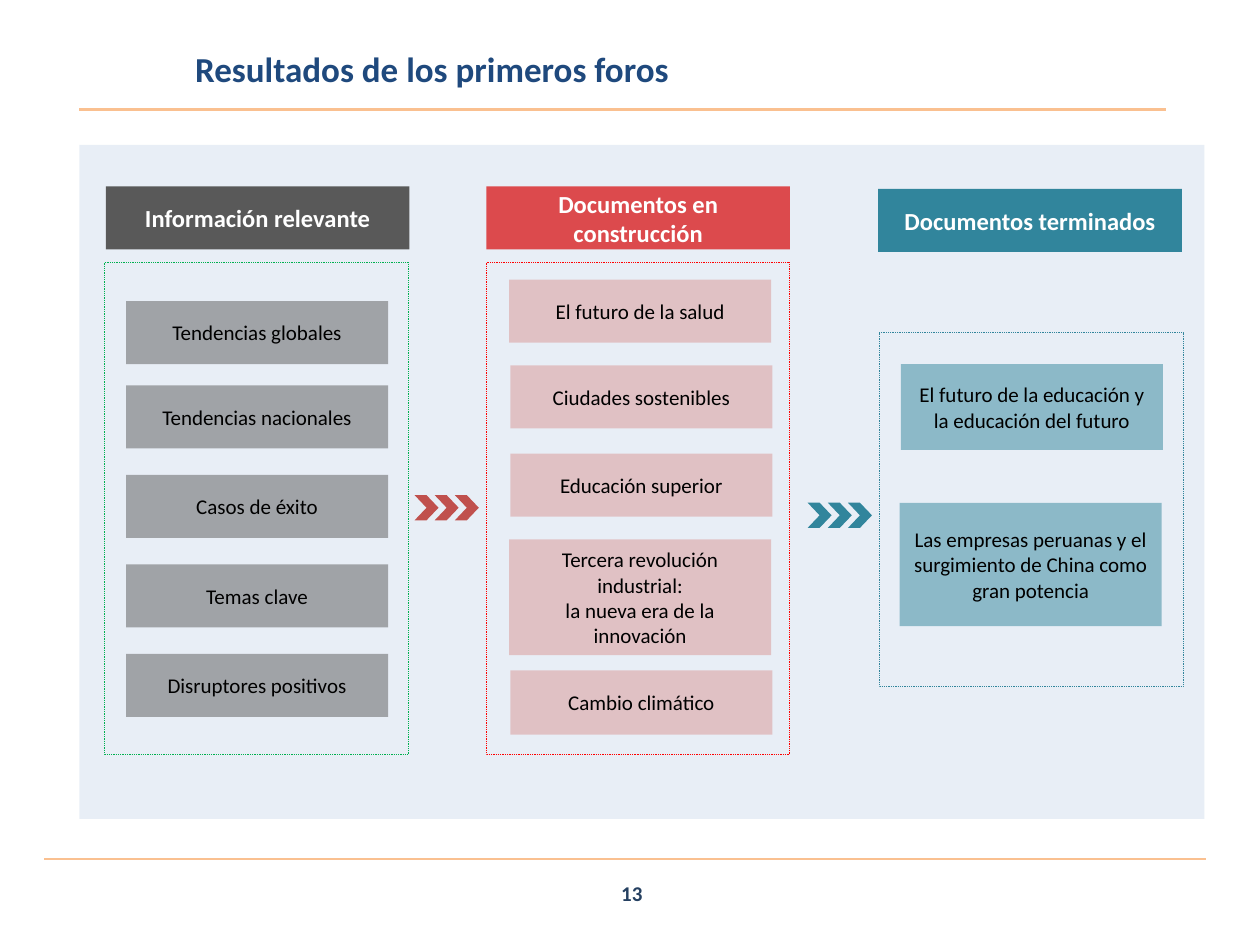
from lxml import etree
from pptx import Presentation
from pptx.dml.color import RGBColor
from pptx.enum.dml import MSO_LINE
from pptx.enum.shapes import MSO_CONNECTOR, MSO_SHAPE
from pptx.enum.text import MSO_ANCHOR, PP_ALIGN
from pptx.oxml.ns import qn
from pptx.util import Inches, Pt

RECTANGLE, CHEVRON = MSO_SHAPE.RECTANGLE, MSO_SHAPE.CHEVRON
STRAIGHT = MSO_CONNECTOR.STRAIGHT
DOTTED = MSO_LINE.ROUND_DOT
MIDDLE = MSO_ANCHOR.MIDDLE
LEFT, CENTER = PP_ALIGN.LEFT, PP_ALIGN.CENTER

FONT = "Calibri"
COLORS = {
    "panel": "4F81BD", "rule": "FAC090", "title": "1F497D", "number": "254061",
    "gray": "595959", "green": "00B050", "red": "DC4A4D", "bright_red": "FF0000",
    "pink": "D99694", "arrow_red": "C0504D", "teal": "31859C",
    "white": "FFFFFF", "black": "000000",
}
COLUMN_WIDTH, CARD_WIDTH, ROW_HEIGHT = 2.41, 2.08, 0.5

COLUMNS = [
    {
        "heading": "Información relevante", "heading_at": (0.84, 1.48), "heading_color": "gray",
        "frame": (0.83, 2.08, 3.91), "frame_color": "green", "card_color": "gray",
        "cards": [
            (1, 2.39, ROW_HEIGHT, ["Tendencias globales"]),
            (1, 3.06, ROW_HEIGHT, ["Tendencias nacionales"]),
            (1, 3.77, ROW_HEIGHT, ["Casos de éxito"]),
            (1, 4.48, ROW_HEIGHT, ["Temas clave"]),
            (1, 5.19, ROW_HEIGHT, ["Disruptores positivos"]),
        ],
    },
    {
        "heading": "Documentos en construcción", "heading_at": (3.86, 1.48), "heading_color": "red",
        "frame": (3.86, 2.08, 3.91), "frame_color": "bright_red", "card_color": "pink",
        "cards": [
            (4.04, 2.22, ROW_HEIGHT, ["El futuro de la salud"]),
            (4.05, 2.9, ROW_HEIGHT, ["Ciudades sostenibles"]),
            (4.05, 3.6, ROW_HEIGHT, ["Educación superior"]),
            (4.04, 4.28, 0.92, ["Tercera revolución industrial:", "la nueva era de la innovación"]),
            (4.05, 5.32, 0.51, ["Cambio climático"]),
        ],
    },
    {
        "heading": "Documentos terminados", "heading_at": (6.97, 1.5), "heading_color": "teal",
        "frame": (6.98, 2.64, 2.81), "frame_color": "teal", "card_color": "teal",
        "cards": [
            (7.15, 2.89, 0.68, ["El futuro de la educación y la educación del futuro"]),
            (7.14, 3.99, 0.98, ["Las empresas peruanas y el surgimiento de China como gran potencia"]),
        ],
    },
]


def color(name):
    """Return the named colour."""
    return RGBColor.from_string(COLORS[name])


def write(frame, lines, size, ink, bold=False, align=CENTER):
    """Write one paragraph per line, vertically centred."""
    frame.word_wrap = True
    frame.vertical_anchor = MIDDLE
    for index, line in enumerate(lines):
        paragraph = frame.add_paragraph() if index else frame.paragraphs[0]
        paragraph.alignment = align
        run = paragraph.add_run()
        run.text = line
        run.font.name = FONT
        run.font.size = Pt(size)
        run.font.bold = bold
        run.font.color.rgb = color(ink)


def add_block(shapes, box, fill, opacity=100, kind=RECTANGLE):
    """Add a borderless filled shape with the given opacity in percent."""
    block = shapes.add_shape(kind, *map(Inches, box))
    block.shadow.inherit = False
    block.line.fill.background()
    block.fill.solid()
    block.fill.fore_color.rgb = color(fill)
    if opacity < 100:
        tint = block.fill._xPr.find(qn("a:solidFill")).find(qn("a:srgbClr"))
        etree.SubElement(tint, qn("a:alpha")).set("val", str(opacity * 1000))
    return block


def add_frame(shapes, box, outline):
    """Add an unfilled rectangle with a dotted outline."""
    frame = shapes.add_shape(RECTANGLE, *map(Inches, box))
    frame.shadow.inherit = False
    frame.fill.background()
    frame.line.color.rgb = color(outline)
    frame.line.width = Pt(0.5)
    frame.line.dash_style = DOTTED


def add_rule(shapes, left, right, y):
    """Add a horizontal rule."""
    rule = shapes.add_connector(STRAIGHT, Inches(left), Inches(y), Inches(right), Inches(y))
    rule.line.color.rgb = color("rule")
    rule.line.width = Pt(1.25)
    etree.SubElement(rule._element.spPr, qn("a:effectLst"))


def add_label(shapes, box, text, size, ink, align):
    """Add a bold text box and return its paragraph."""
    label = shapes.add_textbox(*map(Inches, box)).text_frame
    write(label, [text], size, ink, True, align)
    return label.paragraphs[0]


def add_column(shapes, column):
    """Add a grouped column of heading, dotted frame and cards."""
    members = shapes.add_group_shape().shapes
    heading = add_block(members, (*column["heading_at"], COLUMN_WIDTH, ROW_HEIGHT), column["heading_color"])
    write(heading.text_frame, [column["heading"]], 14, "white", True)
    left, top, height = column["frame"]
    add_frame(members, (left, top, COLUMN_WIDTH, height), column["frame_color"])
    for left, top, height, lines in column["cards"]:
        card = add_block(members, (left, top, CARD_WIDTH, height), column["card_color"], 50)
        write(card.text_frame, lines, 12, "black")


def add_chevrons(shapes, left, top, fill):
    """Add three evenly spaced chevrons."""
    for step in range(3):
        add_block(shapes, (left + 0.16 * step, top, 0.19, 0.2), fill, kind=CHEVRON)


def main():
    """Build the slide and save it."""
    deck = Presentation()
    deck.slide_width, deck.slide_height = Inches(10), Inches(7.5)
    shapes = deck.slides.add_slide(deck.slide_layouts[6]).shapes

    add_block(shapes, (0.63, 1.15, 8.93, 5.35), "panel", 13)
    add_rule(shapes, 0.35, 9.57, 6.82)
    add_rule(shapes, 0.63, 9.25, 0.87)
    add_label(shapes, (3.85, 6.89, 2.33, 0.4), "13", 12, "number", CENTER)
    title = add_label(shapes, (1.45, 0.29, 8.03, 0.5), "Resultados de los primeros foros", 20, "title", LEFT)
    title.space_before = Pt(4)

    for column in COLUMNS:
        add_column(shapes, column)
    add_chevrons(shapes, 3.29, 3.93, "arrow_red")
    add_chevrons(shapes, 6.41, 3.99, "teal")

    deck.save("out.pptx")


if __name__ == "__main__":
    main()
